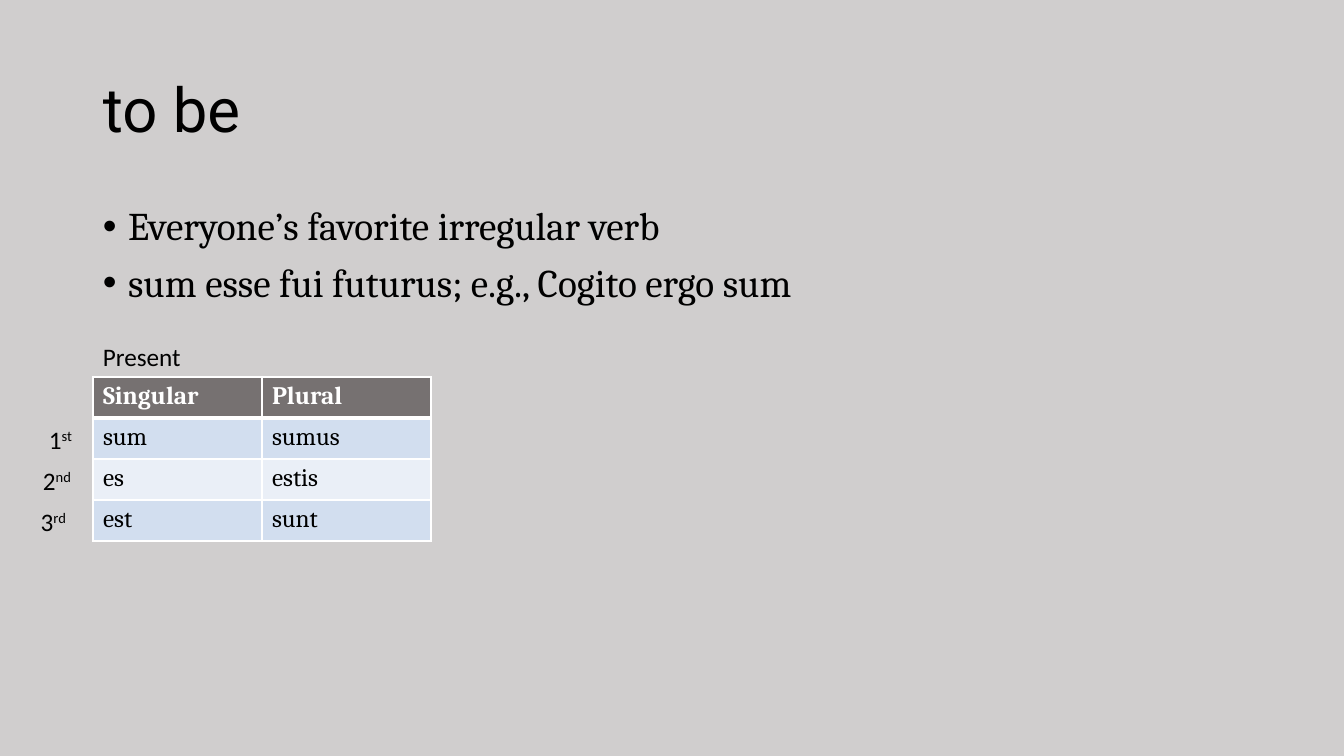
from lxml.etree import SubElement
from pptx import Presentation
from pptx.dml.color import RGBColor as RGB
from pptx.enum.shapes import MSO_SHAPE as SHAPE
from pptx.enum.text import MSO_ANCHOR as ANCHOR, MSO_AUTO_SIZE as AUTO, PP_ALIGN as ALIGN
from pptx.oxml import parse_xml
from pptx.oxml.ns import nsdecls, qn
from pptx.util import Pt

EMU_PER_PX = 914400 / 100.8
SLIDE_W, SLIDE_H = 1344, 756
COLORS = {
    "background": "D0CECE",
    "text": "000000",
    "white": "FFFFFF",
    "header": "767171",
    "odd_row": "D2DEEF",
    "even_row": "EAEFF7",
}
FORMS = [("Singular", "Plural"), ("sum", "sumus"), ("es", "estis"), ("est", "sunt")]
# Number, ordinal ending, left, top, right inset
PERSONS = [("1", "st", 19, 419, 16), ("2", "nd", 24, 460, 22), ("3", "rd", 19, 501, 22)]


def px(n):
    return round(n * EMU_PER_PX)


def rgb(name):
    return RGB.from_string(COLORS[name])


def style(r, size, font, color="text", bold=False):
    r.font.size = Pt(size)
    r.font.name = font
    r.font.color.rgb = rgb(color)
    r.font.bold = bold


def add_background(s):
    sp = s.shapes.add_shape(SHAPE.RECTANGLE, 0, 0, px(SLIDE_W), px(SLIDE_H))
    sp.shadow.inherit = False
    sp.fill.solid()
    sp.fill.fore_color.rgb = rgb("background")
    sp.line.fill.background()


def add_text(s, box, lines, size, font, anchor=ANCHOR.TOP):
    tf = s.shapes.add_textbox(*map(px, box)).text_frame
    tf.word_wrap = True
    tf.vertical_anchor = anchor
    tf.text = "\n".join(lines)
    for p in tf.paragraphs:
        style(p.runs[0], size, font)
    return tf


def add_bullets(s, box, lines):
    tf = add_text(s, box, lines, 28, "Cambria")
    for p in tf.paragraphs:
        p.line_spacing = 0.9
        p.space_before = Pt(10)
        pPr = p._p.get_or_add_pPr()
        pPr.set("marL", "228600")
        pPr.set("indent", "-228600")
        SubElement(pPr, qn("a:buFont")).set("typeface", "Arial")
        SubElement(pPr, qn("a:buChar")).set("char", "•")


def add_person(s, number, ending, left, top, inset):
    tf = add_text(s, (left, top, 69, 40), [number], 18, "Calibri")
    tf.auto_size = AUTO.SHAPE_TO_FIT_TEXT
    tf.margin_right = px(inset)
    p = tf.paragraphs[0]
    p.alignment = ALIGN.RIGHT
    r = p.add_run()
    r.text = ending
    style(r, 18, "Calibri")
    r._r.get_or_add_rPr().set("baseline", "30000")


def set_borders(cell, top, bottom):
    tcPr = cell._tc.get_or_add_tcPr()
    for i, (side, width) in enumerate(zip("LRTB", (1, 1, top, bottom))):
        tcPr.insert(i, parse_xml(
            f'<a:ln{side} {nsdecls("a")} w="{Pt(width)}"><a:solidFill>'
            f'<a:srgbClr val="{COLORS["white"]}"/></a:solidFill></a:ln{side}>'))


def add_forms_table(s, left, top, col_w, row_h):
    n_rows, n_cols = len(FORMS), len(FORMS[0])
    table = s.shapes.add_table(n_rows, n_cols, px(left), px(top),
                               px(col_w * n_cols), px(row_h * n_rows)).table
    for col in table.columns:
        col.width = px(col_w)
    for i, row in enumerate(FORMS):
        table.rows[i].height = px(row_h)
        header = i == 0
        fill = "header" if header else "odd_row" if i % 2 else "even_row"
        for j, form in enumerate(row):
            cell = table.cell(i, j)
            cell.text = form
            style(cell.text_frame.paragraphs[0].runs[0], 18, "Cambria",
                  "white" if header else "text", header)
            cell.fill.solid()
            cell.fill.fore_color.rgb = rgb(fill)
            set_borders(cell, 3 if i == 1 else 1, 3 if header else 1)


def main():
    prs = Presentation()
    prs.slide_width, prs.slide_height = px(SLIDE_W), px(SLIDE_H)
    s = prs.slides.add_slide(prs.slide_layouts[6])
    add_background(s)

    # Title and introduction
    title = add_text(s, (93, 40, 1159, 146), ["to be"], 44, "Roboto", ANCHOR.MIDDLE)
    title.paragraphs[0].line_spacing = 0.9
    add_bullets(s, (93, 202, 1159, 480), [
        "Everyone’s favorite irregular verb",
        "sum esse fui futurus; e.g., Cogito ergo sum",
    ])

    # Present tense forms
    add_forms_table(s, 93, 377, 169, 41)
    for person in PERSONS:
        add_person(s, *person)
    tense = add_text(s, (93, 336, 180, 40), ["Present"], 18, "Calibri")
    tense.auto_size = AUTO.SHAPE_TO_FIT_TEXT

    prs.save("out.pptx")


if __name__ == "__main__":
    main()
